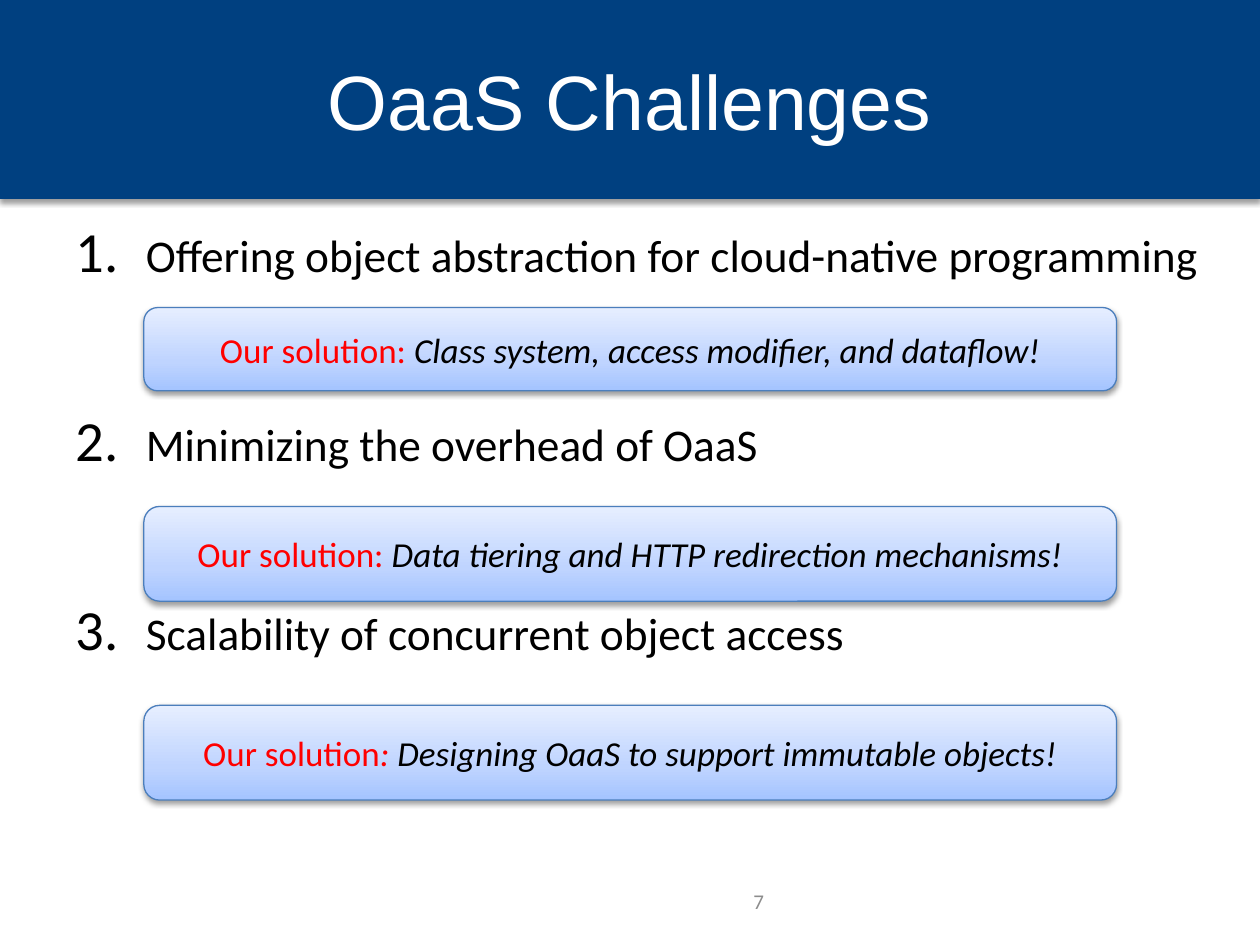
"""Build the OaaS Challenges slide."""
from dataclasses import dataclass

from lxml import etree
from pptx import Presentation
from pptx.dml.color import RGBColor
from pptx.enum.shapes import MSO_SHAPE
from pptx.enum.text import MSO_ANCHOR, PP_ALIGN
from pptx.oxml.ns import qn
from pptx.util import Cm, Pt

RECT, ROUND = MSO_SHAPE.RECTANGLE, MSO_SHAPE.ROUNDED_RECTANGLE
TOP, MIDDLE = MSO_ANCHOR.TOP, MSO_ANCHOR.MIDDLE
LEFT, MID, RIGHT = PP_ALIGN.LEFT, PP_ALIGN.CENTER, PP_ALIGN.RIGHT

TITLE = "OaaS Challenges"
PAGE = "7"
ITEMS = [
    "Offering object abstraction for cloud-native programming",
    "Minimizing the overhead of OaaS",
    "Scalability of concurrent object access",
]
# Each run: text, colour name, italic
CARDS = [
    (1.68, [("Our solution: ", "key", False),
            ("Class system, access modifier, and dataflow!", "ink", True)]),
    (1.91, [("Our solution: ", "key", False),
            ("Data tiering and HTTP redirection mechanisms!", "ink", True)]),
    (1.91, [("Our solution", "key", False), (":", "key", True),
            (" Designing OaaS to support immutable objects!", "ink", True)]),
]


@dataclass(frozen=True)
class Theme:
    """Colours, fonts and type sizes."""
    band: str = "004080"
    white: str = "FFFFFF"
    ink: str = "000000"
    key: str = "FF0000"
    gray: str = "8C8C8C"
    edge: str = "4B7EBC"
    fade: tuple = ((0, "A4C4FF"), (35, "BFD4FF"), (100, "E6EEFF"))
    head: str = "Arial"
    body: str = "Calibri"
    big: float = 44
    item: float = 25.9
    note: float = 20
    small: float = 12


LOOK = Theme()


def node(top, tag, **attrs):
    """Add an XML child element."""
    return etree.SubElement(top, qn(tag), attrs)


def write(par, text, size, color, font=LOOK.body, slant=False):
    """Add one styled run."""
    run = par.add_run()
    run.text = text
    run.font.size = Pt(size)
    run.font.name = font
    run.font.italic = slant
    run.font.color.rgb = RGBColor.from_string(color)


def frame(shape, anchor, align):
    """Set up a text frame and return its first paragraph."""
    text = shape.text_frame
    text.word_wrap = True
    text.vertical_anchor = anchor
    text.paragraphs[0].alignment = align
    return text.paragraphs[0]


def shade(shape):
    """Give the shape a soft shadow below."""
    shape.shadow.inherit = False
    glow = node(shape._element.spPr.find(qn("a:effectLst")), "a:outerShdw",
                blurRad="40000", dist="20000", dir="5400000", rotWithShape="0")
    tint = node(glow, "a:srgbClr", val=LOOK.ink)
    node(tint, "a:alpha", val="38000")


def blend(shape):
    """Fill the shape with the upward gradient."""
    shape.fill.gradient()
    grad = shape._element.spPr.find(qn("a:gradFill"))
    for child in list(grad):
        grad.remove(child)
    stops = node(grad, "a:gsLst")
    for pos, color in LOOK.fade:
        stop = node(stops, "a:gs", pos=str(pos * 1000))
        node(stop, "a:srgbClr", val=color)
    node(grad, "a:lin", ang="16200000", scaled="0")


def number(par):
    """Number the paragraph with a large hanging numeral."""
    props = par._p.get_or_add_pPr()
    props.set("marL", str(Cm(1.42)))
    props.set("indent", str(-Cm(1.42)))
    node(props, "a:buSzPct", val="125000")
    node(props, "a:buFont", typeface=LOOK.body)
    node(props, "a:buAutoNum", type="arabicPeriod")


def main():
    """Draw the slide and save it."""
    deck = Presentation()
    deck.slide_width, deck.slide_height = Cm(25.4), Cm(19.05)
    shapes = deck.slides.add_slide(deck.slide_layouts[6]).shapes

    band = shapes.add_shape(RECT, 0, 0, deck.slide_width, Cm(4.01))
    band.fill.solid()
    band.fill.fore_color.rgb = RGBColor.from_string(LOOK.band)
    band.line.fill.background()
    shade(band)

    title = shapes.add_textbox(Cm(1.27), Cm(0.43), Cm(22.86), Cm(3.18))
    write(frame(title, MIDDLE, MID), TITLE, LOOK.big, LOOK.white, LOOK.head)

    body = shapes.add_textbox(Cm(1.27), Cm(4.45), Cm(23.44), Cm(9.93))
    par = frame(body, TOP, LEFT)
    for rank, item in enumerate(ITEMS):
        if rank:
            par = body.text_frame.add_paragraph()
            par.space_before = Pt(77)
        number(par)
        write(par, item, LOOK.item, LOOK.ink)

    page = shapes.add_textbox(Cm(9.73), Cm(17.65), Cm(5.92), Cm(1.02))
    write(frame(page, MIDDLE, RIGHT), PAGE, LOOK.small, LOOK.gray)

    for rank, (tall, runs) in enumerate(CARDS):
        card = shapes.add_shape(ROUND, Cm(2.9), Cm(6.2 + 4.01 * rank),
                                Cm(19.61), Cm(tall))
        blend(card)
        card.line.color.rgb = RGBColor.from_string(LOOK.edge)
        card.line.width = Pt(0.75)
        shade(card)
        par = frame(card, MIDDLE, MID)
        for text, tone, slant in runs:
            write(par, text, LOOK.note, getattr(LOOK, tone), slant=slant)

    deck.save("out.pptx")


if __name__ == "__main__":
    main()
